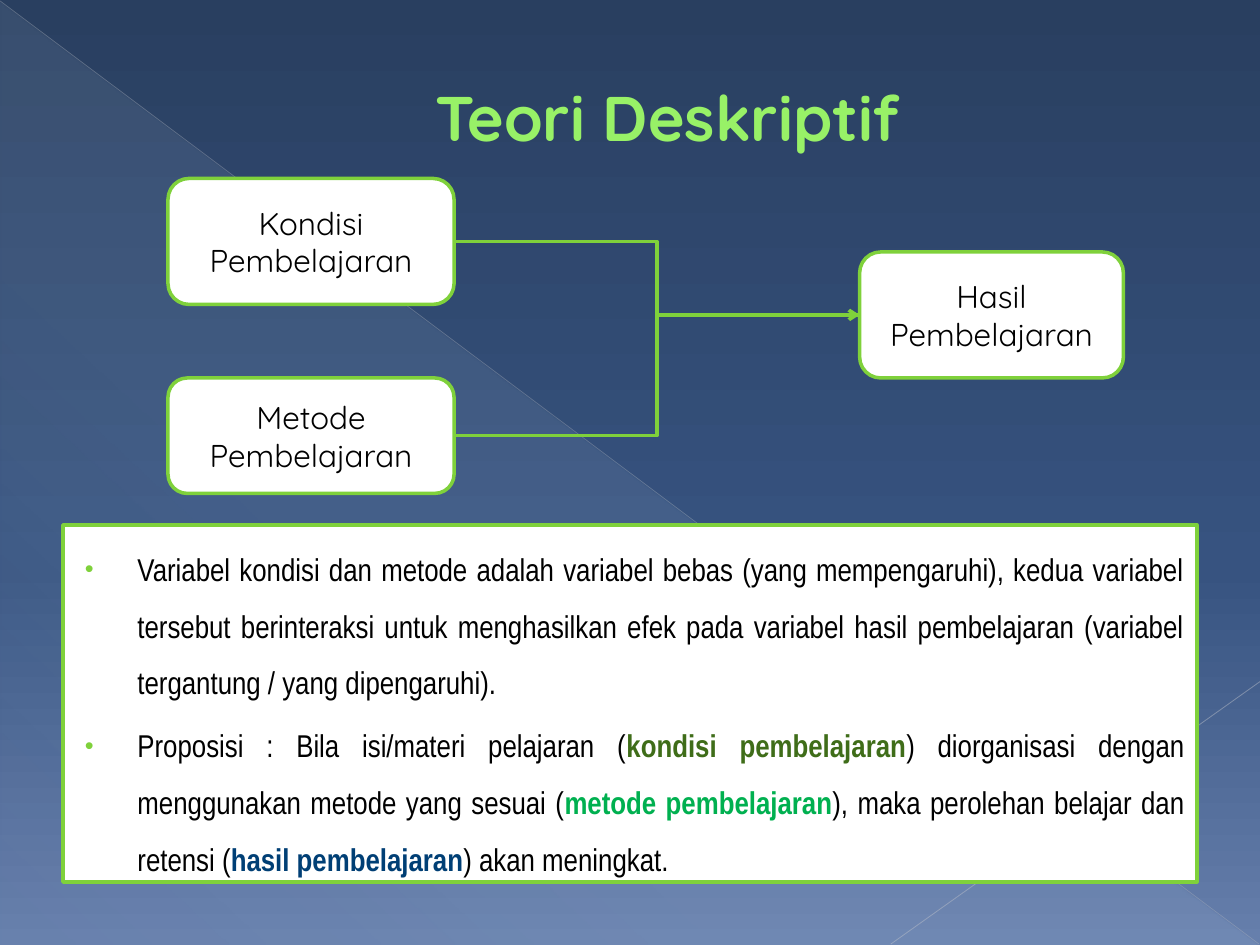
from dataclasses import dataclass

from lxml import etree
from pptx import Presentation
from pptx.dml.color import RGBColor
from pptx.enum.shapes import MSO_CONNECTOR, MSO_SHAPE
from pptx.enum.text import MSO_ANCHOR, PP_ALIGN
from pptx.oxml.ns import qn
from pptx.util import Pt

RECTANGLE = MSO_SHAPE.RECTANGLE
ROUNDED = MSO_SHAPE.ROUNDED_RECTANGLE
TRIANGLE = MSO_SHAPE.RIGHT_TRIANGLE
STRAIGHT, ELBOW = MSO_CONNECTOR.STRAIGHT, MSO_CONNECTOR.ELBOW
TOP, MIDDLE = MSO_ANCHOR.TOP, MSO_ANCHOR.MIDDLE
LEFT, CENTER, JUSTIFY = PP_ALIGN.LEFT, PP_ALIGN.CENTER, PP_ALIGN.JUSTIFY
LEFT_SITE, RIGHT_SITE = 1, 3


@dataclass(frozen=True)
class Theme:
    heading_font: str = "Quicksand"
    body_font: str = "Arial Narrow"
    title_size: float = 36
    text_size: float = 18
    title: str = "98F167"
    title_outline: str = "589129"
    accent: str = "7FD13B"
    panel: str = "FFFFFF"
    text: str = "000000"
    condition: str = "3F6D19"
    method: str = "00B050"
    result: str = "003F75"
    ray_upper: str = "B7BCC5"
    ray_lower: str = "BFC3CB"
    # Gradient stops: position, colour, opacity in percent
    backdrop: tuple = ((0, "293F60", 100), (60, "375380", 100), (100, "667FAC", 100))
    beam: tuple = ((0, "D6ECFF", 10), (70, "D6ECFF", 8), (100, "D6ECFF", 1))


THEME = Theme()

POINTS = (
    (
        ("Variabel kondisi dan metode adalah variabel bebas (yang mempengaruhi), "
         "kedua variabel tersebut berinteraksi untuk menghasilkan efek pada variabel "
         "hasil pembelajaran (variabel tergantung / yang dipengaruhi).", None),
    ),
    (
        ("Proposisi : Bila isi/materi pelajaran (", None),
        ("kondisi pembelajaran", THEME.condition),
        (") diorganisasi dengan menggunakan metode yang sesuai (", None),
        ("metode pembelajaran", THEME.method),
        ("), maka perolehan belajar dan retensi (", None),
        ("hasil pembelajaran", THEME.result),
        (") akan meningkat.", None),
    ),
)


def rgb(value):
    return RGBColor.from_string(value)


def add_xml(parent, tag, **attributes):
    return etree.SubElement(parent, qn(tag), attributes)


def add_color(parent, color, opacity=100):
    node = add_xml(parent, "a:srgbClr", val=color)
    if opacity < 100:
        add_xml(node, "a:alpha", val=str(opacity * 1000))


def set_gradient(fill, properties, stops, angle):
    """Replace the fill held in the properties element by a linear gradient."""
    fill.solid()
    gradient = etree.Element(qn("a:gradFill"), rotWithShape="1")
    stop_list = add_xml(gradient, "a:gsLst")
    for position, color, opacity in stops:
        add_color(add_xml(stop_list, "a:gs", pos=str(position * 1000)), color, opacity)
    add_xml(gradient, "a:lin", ang=str(angle * 60000), scaled="0")
    properties.replace(properties.find(qn("a:solidFill")), gradient)


def format_run(run, font, size, color, bold=False):
    run.font.name = font
    run.font.size = Pt(size)
    run.font.bold = bold
    run.font.color.rgb = rgb(color)


def add_panel(slide, kind, left, top, width, height, anchor):
    panel = slide.shapes.add_shape(kind, Pt(left), Pt(top), Pt(width), Pt(height))
    panel.shadow.inherit = False
    panel.fill.solid()
    panel.fill.fore_color.rgb = rgb(THEME.panel)
    panel.line.color.rgb = rgb(THEME.accent)
    panel.line.width = Pt(2)
    panel.text_frame.word_wrap = True
    panel.text_frame.vertical_anchor = anchor
    return panel


def add_variable(slide, label, left, top, width, height):
    variable = add_panel(slide, ROUNDED, left, top, width, height, MIDDLE)
    paragraph = variable.text_frame.paragraphs[0]
    paragraph.text = label
    paragraph.alignment = CENTER
    format_run(paragraph.runs[0], THEME.heading_font, THEME.text_size, THEME.text)
    return variable


def add_line(slide, kind, start, end, color, width, opacity=100):
    line = slide.shapes.add_connector(kind, *(Pt(v) for v in start + end))
    line.line.color.rgb = rgb(color)
    line.line.width = Pt(width)
    if opacity < 100:
        color_node = line.line.fill.fore_color and line.element.spPr.find(
            ".//" + qn("a:srgbClr"))
        add_xml(color_node, "a:alpha", val=str(opacity * 1000))
    add_xml(line.element.spPr, "a:effectLst")
    return line


def link(slide, cause, effect, arrow=False):
    connector = add_line(slide, ELBOW, (0, 0), (1, 1), THEME.accent, 2)
    connector.begin_connect(cause, RIGHT_SITE)
    connector.end_connect(effect, LEFT_SITE)
    if arrow:
        add_xml(connector.element.spPr.find(qn("a:ln")), "a:tailEnd", type="arrow")


def add_backdrop(slide):
    fill = slide.background.fill
    fill.solid()
    set_gradient(fill, slide.element.find(".//" + qn("p:bgPr")), THEME.backdrop, 90)
    beam = slide.shapes.add_shape(TRIANGLE, Pt(0.5), Pt(1), Pt(719), Pt(539))
    beam.shadow.inherit = False
    beam.line.fill.background()
    set_gradient(beam.fill, beam.element.spPr, THEME.beam, 133)
    add_line(slide, STRAIGHT, (0, 0.5), (719.5, 539.5), THEME.ray_upper, 0.39, 35)
    add_line(slide, STRAIGHT, (720, 389.5), (509, 539.5), THEME.ray_lower, 0.47, 45)


def add_title(slide, text):
    title = slide.shapes.add_textbox(Pt(204), Pt(21.5), Pt(354), Pt(90))
    title.text_frame.word_wrap = True
    title.text_frame.vertical_anchor = MIDDLE
    paragraph = title.text_frame.paragraphs[0]
    paragraph.text = text
    paragraph.alignment = LEFT
    properties = paragraph._p.get_or_add_pPr()
    properties.set("marL", str(Pt(38)))
    properties.set("indent", "0")
    run = paragraph.runs[0]
    format_run(run, THEME.heading_font, THEME.title_size, THEME.title, bold=True)
    outline = etree.Element(qn("a:ln"), w=str(Pt(0.5)))
    add_color(add_xml(outline, "a:solidFill"), THEME.title_outline)
    run.font._element.insert(0, outline)


def set_bullet(paragraph):
    properties = paragraph._p.get_or_add_pPr()
    properties.set("marL", str(Pt(35.5)))
    properties.set("indent", str(-Pt(30)))
    add_color(add_xml(properties, "a:buClr"), THEME.accent)
    add_xml(properties, "a:buSzPct", val="80000")
    add_xml(properties, "a:buFont", typeface="Arial")
    add_xml(properties, "a:buChar", char="•")


def add_explanation(slide, points):
    frame = add_panel(slide, RECTANGLE, 36, 300, 648, 204, TOP).text_frame
    for index, parts in enumerate(points):
        paragraph = frame.add_paragraph() if index else frame.paragraphs[0]
        paragraph.alignment = JUSTIFY
        paragraph.line_spacing = 1.5
        paragraph.space_before = Pt(THEME.text_size * 0.2)
        set_bullet(paragraph)
        for text, highlight in parts:
            run = paragraph.add_run()
            run.text = text
            format_run(run, THEME.body_font, THEME.text_size,
                       highlight or THEME.text, bold=highlight is not None)


def main():
    deck = Presentation()
    deck.slide_width, deck.slide_height = Pt(720), Pt(540)
    slide = deck.slides.add_slide(deck.slide_layouts[6])
    add_backdrop(slide)
    add_title(slide, "Teori Deskriptif")
    add_explanation(slide, POINTS)
    condition = add_variable(slide, "Kondisi Pembelajaran", 96, 102, 163.5, 72)
    method = add_variable(slide, "Metode Pembelajaran", 96, 216, 163.5, 66)
    result = add_variable(slide, "Hasil Pembelajaran", 491.25, 144, 150.75, 72)
    link(slide, condition, result)
    link(slide, method, result, arrow=True)
    deck.save("out.pptx")


if __name__ == "__main__":
    main()
